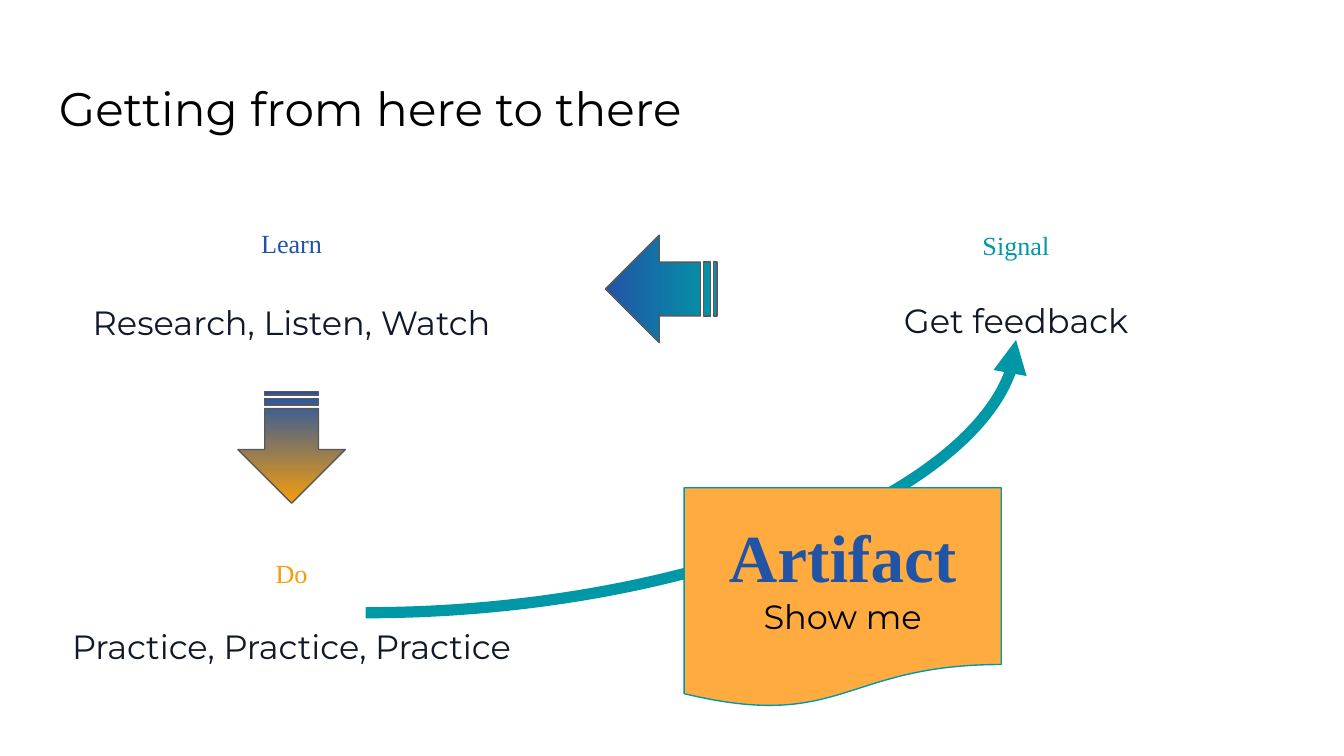
from pptx import Presentation
from pptx.dml.color import RGBColor
from pptx.enum.shapes import MSO_CONNECTOR, MSO_SHAPE
from pptx.enum.text import MSO_ANCHOR, PP_ALIGN
from pptx.oxml.ns import qn
from pptx.util import Inches, Pt
from lxml.etree import SubElement

# Content
TITLE = "Getting from here to there"
ARTIFACT = [("Artifact", "Times New Roman", 36, "blue", True),
            ("Show me", "Montserrat", 18, "black", False)]
COLORS = {"blue": "2254A6", "amber": "F59E0B", "teal": "0097A7", "orange": "FFAB40",
          "ink": "111827", "black": "000000", "gray": "595959"}

# Two columns of steps on a 16:9 slide, given by their centre lines
WIDTH = 10
HEIGHT = WIDTH * 9 / 16
LEFT, RIGHT = 2.17, 7.56
CAPTION_HEIGHT = 0.4
# label, colour, label top, width, height; caption, its top, width; column centre
STEPS = [("Do", "amber", 4.1, 0.71, 0.41, "Practice, Practice, Practice", 4.56, 3.82, LEFT),
         ("Learn", "blue", 1.64, 1.4, 0.41, "Research, Listen, Watch", 2.15, 3.29, LEFT),
         ("Signal", "teal", 1.66, 1.5, 0.55, "Get feedback", 2.13, 3.82, RIGHT)]
# centre x, centre y, rotation, tail colour, head colour
ARROWS = [(LEFT, 3.33, 90, "blue", "amber"),
          (4.92, 2.15, 180, "teal", "blue")]
ARROW_SIZE = (0.83, 0.8)


def rgb(name):
    return RGBColor.from_string(COLORS[name])


def style(paragraph, text, face, size, color, bold=False, align=PP_ALIGN.CENTER):
    paragraph.text = text
    paragraph.alignment = align
    font = paragraph.font
    font.name, font.size, font.bold = face, Pt(size), bold
    font.color.rgb = rgb(color)


def set_insets(frame, inset):
    frame.margin_left = frame.margin_right = Inches(0.1)
    frame.margin_top = frame.margin_bottom = Inches(inset)
    frame.word_wrap = True


def add_text(box, inset, *styling, **options):
    frame = slide.shapes.add_textbox(*map(Inches, box)).text_frame
    set_insets(frame, inset)
    style(frame.paragraphs[0], *styling, **options)


def add_outlined(kind, box, line_color):
    shape = slide.shapes.add_shape(kind, *map(Inches, box))
    shape.shadow.inherit = False
    shape.line.color.rgb = rgb(line_color)
    shape.line.width = Pt(0.75)
    return shape


deck = Presentation()
deck.slide_width, deck.slide_height = Inches(WIDTH), Inches(HEIGHT)
slide = deck.slides.add_slide(deck.slide_layouts[6])

# Curve from practice up to feedback
curve = slide.shapes.add_connector(
    MSO_CONNECTOR.CURVE, *map(Inches, (2.72, 4.56, RIGHT, 2.53)))
curve.line.color.rgb = rgb("teal")
curve.line.width = Pt(6)
properties = curve._element.spPr
properties.find(qn("a:prstGeom")).set("prst", "curvedConnector2")
SubElement(properties.find(qn("a:ln")), qn("a:tailEnd"), type="triangle")
SubElement(properties, qn("a:effectLst"))

# Title
add_text((0.34, 0.49, 9.32, 0.63), 0.1, TITLE, "Montserrat", 25.2, "black",
         align=PP_ALIGN.LEFT)

# Steps
for (label, color, label_top, label_width, label_height,
     caption, caption_top, caption_width, center) in STEPS:
    add_text((center - caption_width / 2, caption_top, caption_width, CAPTION_HEIGHT),
             0.1, caption, "Montserrat", 18, "ink")
    add_text((center - label_width / 2, label_top, label_width, label_height),
             0.05, label, "Times New Roman", 14, color)

# Striped arrows between steps
for x, y, rotation, tail, head in ARROWS:
    width, height = ARROW_SIZE
    arrow = add_outlined(MSO_SHAPE.STRIPED_RIGHT_ARROW,
                         (x - width / 2, y - height / 2, width, height), "gray")
    arrow.rotation = rotation
    arrow.fill.gradient()
    arrow.fill.gradient_angle = 0
    for stop, color in zip(arrow.fill.gradient_stops, (tail, head)):
        stop.color.rgb = rgb(color)

# Artifact sheet
sheet = add_outlined(MSO_SHAPE.FLOWCHART_DOCUMENT, (5.09, 3.63, 2.36, 1.64), "teal")
sheet.fill.solid()
sheet.fill.fore_color.rgb = rgb("orange")
sheet_text = sheet.text_frame
set_insets(sheet_text, 0.1)
sheet_text.vertical_anchor = MSO_ANCHOR.MIDDLE
style(sheet_text.paragraphs[0], *ARTIFACT[0])
for row in ARTIFACT[1:]:
    style(sheet_text.add_paragraph(), *row)

deck.save("out.pptx")
